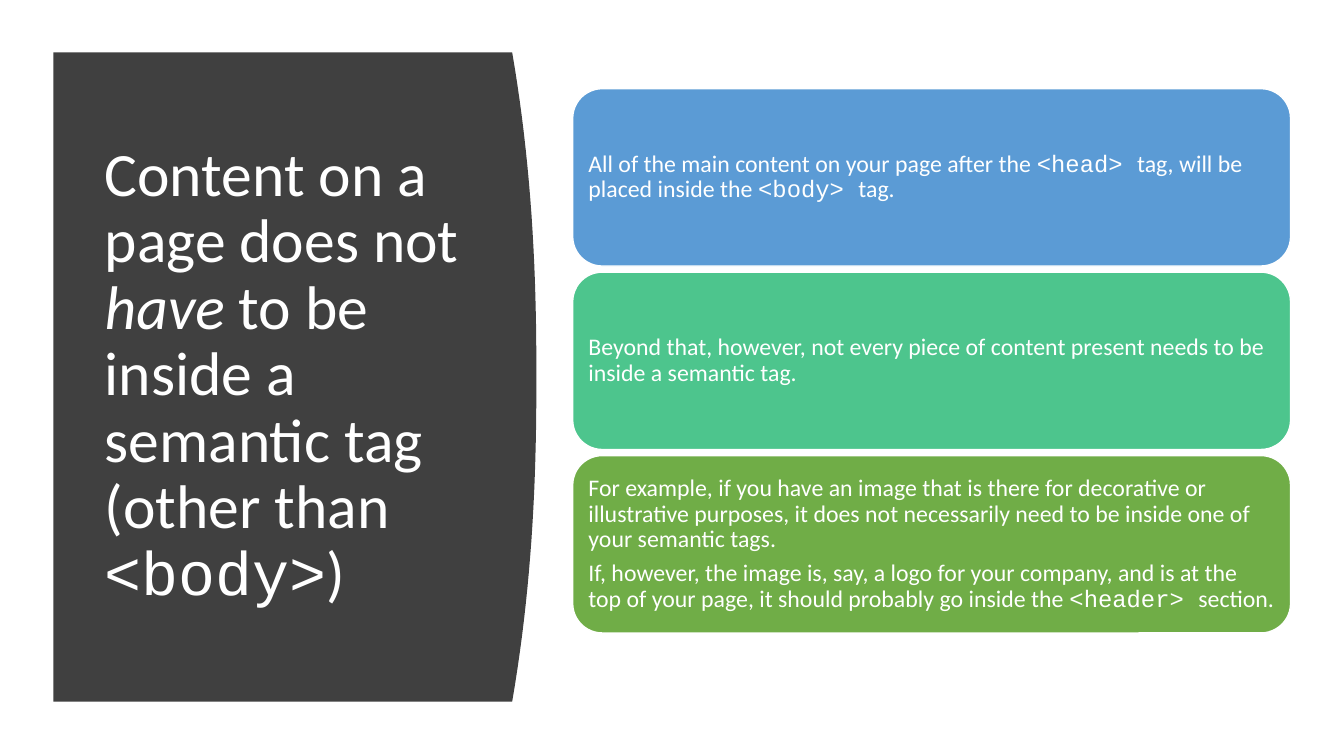
"""Build a slide on semantic tags: a curved title panel beside three text cards."""
import pptx
import pptx.util
import pptx.dml.color
import pptx.enum.shapes
import pptx.enum.text

PX = 9144
COLORS = {"panel": "404040", "blue": "5B9BD5", "teal": "4DC58D",
          "green": "70AD47", "white": "FFFFFF"}


def paint(shape, fill, line=None):
    shape.shadow.inherit = False
    shape.fill.solid()
    shape.fill.fore_color.rgb = pptx.dml.color.RGBColor.from_string(COLORS[fill])
    if line is None:
        shape.line.fill.background()
    else:
        shape.line.color.rgb = pptx.dml.color.RGBColor.from_string(COLORS[line])
        shape.line.width = pptx.util.Pt(1)


def write(frame, paragraphs, size, gap):
    frame.word_wrap = True
    frame.vertical_anchor = pptx.enum.text.MSO_ANCHOR.MIDDLE
    for index, pieces in enumerate(paragraphs):
        para = frame.add_paragraph() if index else frame.paragraphs[0]
        para.alignment = pptx.enum.text.PP_ALIGN.LEFT
        para.line_spacing = 0.9
        para.space_after = pptx.util.Pt(gap)
        for piece in pieces:
            if piece == "\n":
                para.add_line_break()
                continue
            span = para.add_run()
            span.text = piece
            span.font.name = "Courier New" if piece.startswith("<") else "Calibri"
            span.font.size = pptx.util.Pt(size)
            span.font.italic = piece == "have "
            span.font.color.rgb = pptx.dml.color.RGBColor.from_string(COLORS["white"])


deck = pptx.Presentation()
deck.slide_width = 1333 * PX
deck.slide_height = 750 * PX
page = deck.slides.add_slide(deck.slide_layouts[6])

left, top, bottom = 53, 52, 696
edge, bulge, steps = 508, 24, 40
middle, half = (top + bottom) / 2, (bottom - top) / 2
curve = []
for step in range(steps + 1):
    y = top + (bottom - top) * step / steps
    x = edge + bulge * (1 - (abs(y - middle) / half) ** 2.3)
    curve.append((round(x * PX), round(y * PX)))
outline = page.shapes.build_freeform(left * PX, top * PX, scale=1.0)
outline.add_line_segments(curve + [(left * PX, bottom * PX)], close=True)
paint(outline.convert_to_shape(), "panel")

title = page.shapes.add_textbox(94 * PX, 111 * PX, 374 * PX, 524 * PX)
write(title.text_frame, [
    ["Content on a page does not ", "have ", "to be inside a semantic tag ", "\n",
     "(other than ", "<body>", ")"],
], 44, 0)

cards = [
    ("blue", [["All of the main content on your page after the ", "<head> ",
               "tag, will be placed inside the ", "<body> ", "tag."]]),
    ("teal", [["Beyond that, however, not every piece of content present needs "
               "to be inside a semantic tag."]]),
    ("green", [["For example, if you have an image that is there for decorative or "
                "illustrative purposes, it does not necessarily need to be inside "
                "one of your semantic tags."],
               ["If, however, the image is, say, a logo for your company, and is at "
                "the top of your page, it should probably go inside the ",
                "<header> ", "section."]]),
]
card_top, card_height, pitch, inset = 88, 176, 182, 7
for row, (color, paragraphs) in enumerate(cards):
    card = page.shapes.add_shape(
        pptx.enum.shapes.MSO_SHAPE.ROUNDED_RECTANGLE,
        568 * PX, (card_top + row * pitch) * PX, 712 * PX, card_height * PX)
    paint(card, color, "white")
    frame = card.text_frame
    frame.margin_left = frame.margin_right = inset * PX
    frame.margin_top = frame.margin_bottom = inset * PX
    write(frame, paragraphs, 17, 6)

deck.save("out.pptx")
